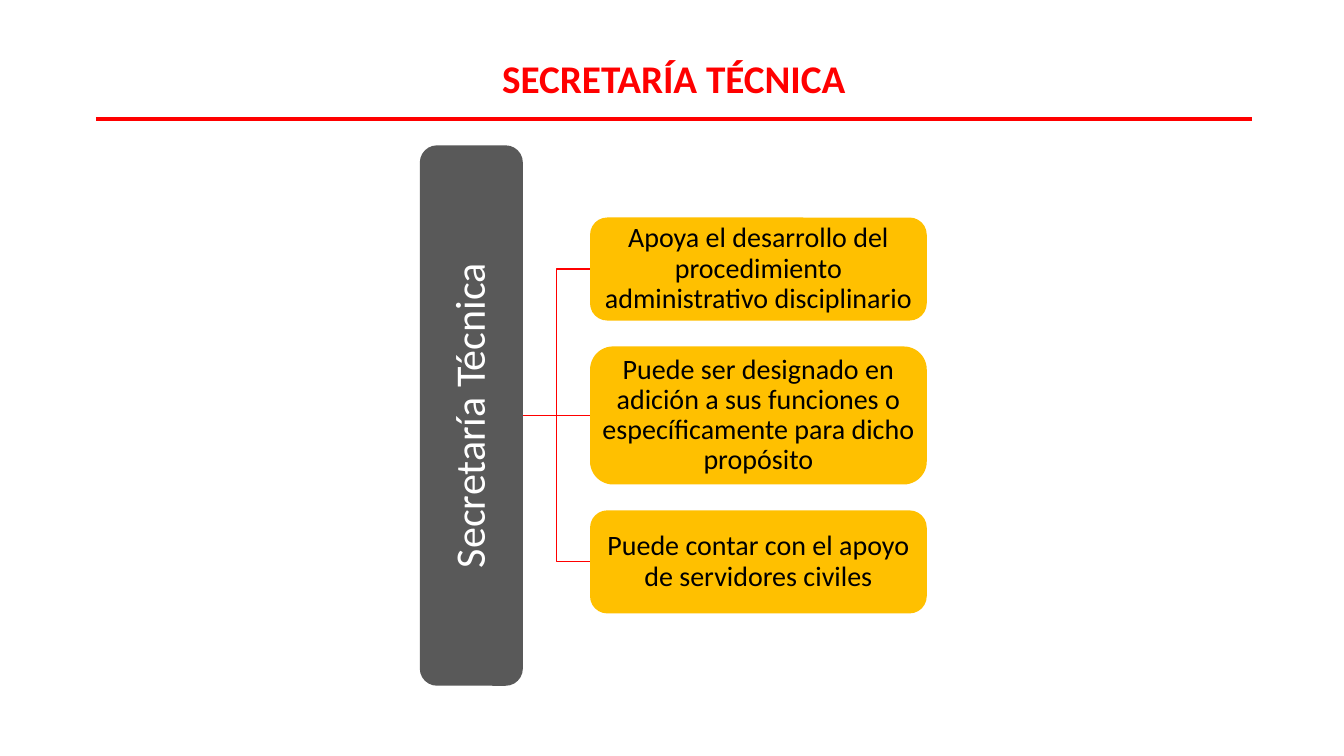
from pptx import Presentation
from pptx.dml.color import RGBColor
from pptx.enum.shapes import MSO_CONNECTOR as Link, MSO_SHAPE as Shape
from pptx.enum.text import MSO_ANCHOR as Anchor, PP_ALIGN as Align
from pptx.util import Pt
from lxml import etree

RED, GREY, GOLD = "FF0000", "595959", "FFC000"


def paint(color, hue):
    color.rgb = RGBColor.from_string(hue)


def write(frame, text, size, hue, bold=False, inset=0.9, space=1):
    frame.word_wrap = True
    frame.vertical_anchor = Anchor.MIDDLE
    frame.margin_left = frame.margin_right = Pt(inset)
    frame.margin_top = frame.margin_bottom = Pt(inset)
    para = frame.paragraphs[0]
    para.alignment = Align.CENTER
    para.line_spacing = space
    run = para.add_run()
    run.text = text
    run.font.name = "Calibri"
    run.font.size = Pt(size)
    run.font.bold = bold
    paint(run.font.color, hue)


deck = Presentation()
deck.slide_width, deck.slide_height = Pt(960), Pt(540)
slide = deck.slides.add_slide(deck.slide_layouts[5])
shapes = slide.shapes

title = shapes.title
title.left, title.top, title.width, title.height = Pt(68.4), Pt(35.3), Pt(825.8), Pt(41)
write(title.text_frame, "SECRETARÍA TÉCNICA", 28, RED, bold=True, inset=3.6)

mid = 296.8
left, width, gap = 421.5, 240.5, 18.5
stem = 373.5
thick, long = 73.6, 386
duties = [
    ("Apoya el desarrollo del procedimiento administrativo disciplinario", 73.6),
    ("Puede ser designado en adición a sus funciones o específicamente para dicho propósito", 98.6),
    ("Puede contar con el apoyo de servidores civiles", 73.6),
]

boxes = [(Shape.ROUNDED_RECTANGLE, stem - thick / 2 - long / 2, mid - thick / 2,
          long, thick, 270, GREY, "Secretaría Técnica", 30, "FFFFFF", 1.8)]
lines = [(Link.STRAIGHT, 68.4, 85, 894.2, 85, 2.25)]
top = mid - (sum(high for text, high in duties) + gap * 2) / 2
for text, high in duties:
    boxes.append((Shape.ROUNDED_RECTANGLE, left, top, width, high, 0, GOLD, text, 20, "000000", 0.9))
    y = top + high / 2
    kind = Link.STRAIGHT if abs(y - mid) < 1 else Link.ELBOW
    lines.append((kind, stem, mid, left, y, 0.85))
    top += high + gap

for kind, x1, y1, x2, y2, weight in lines:
    line = shapes.add_connector(kind, Pt(x1), Pt(y1), Pt(x2), Pt(y2))
    paint(line.line.color, RED)
    line.line.width = Pt(weight)
    etree.SubElement(line._element.spPr, "{http://schemas.openxmlformats.org/drawingml/2006/main}effectLst")

for kind, x, y, wide, high, turn, fill, text, size, hue, inset in boxes:
    box = shapes.add_shape(kind, Pt(x), Pt(y), Pt(wide), Pt(high))
    box.rotation = turn
    box.shadow.inherit = False
    box.fill.solid()
    paint(box.fill.fore_color, fill)
    box.line.fill.background()
    write(box.text_frame, text, size, hue, inset=inset, space=0.9)

deck.save("out.pptx")
